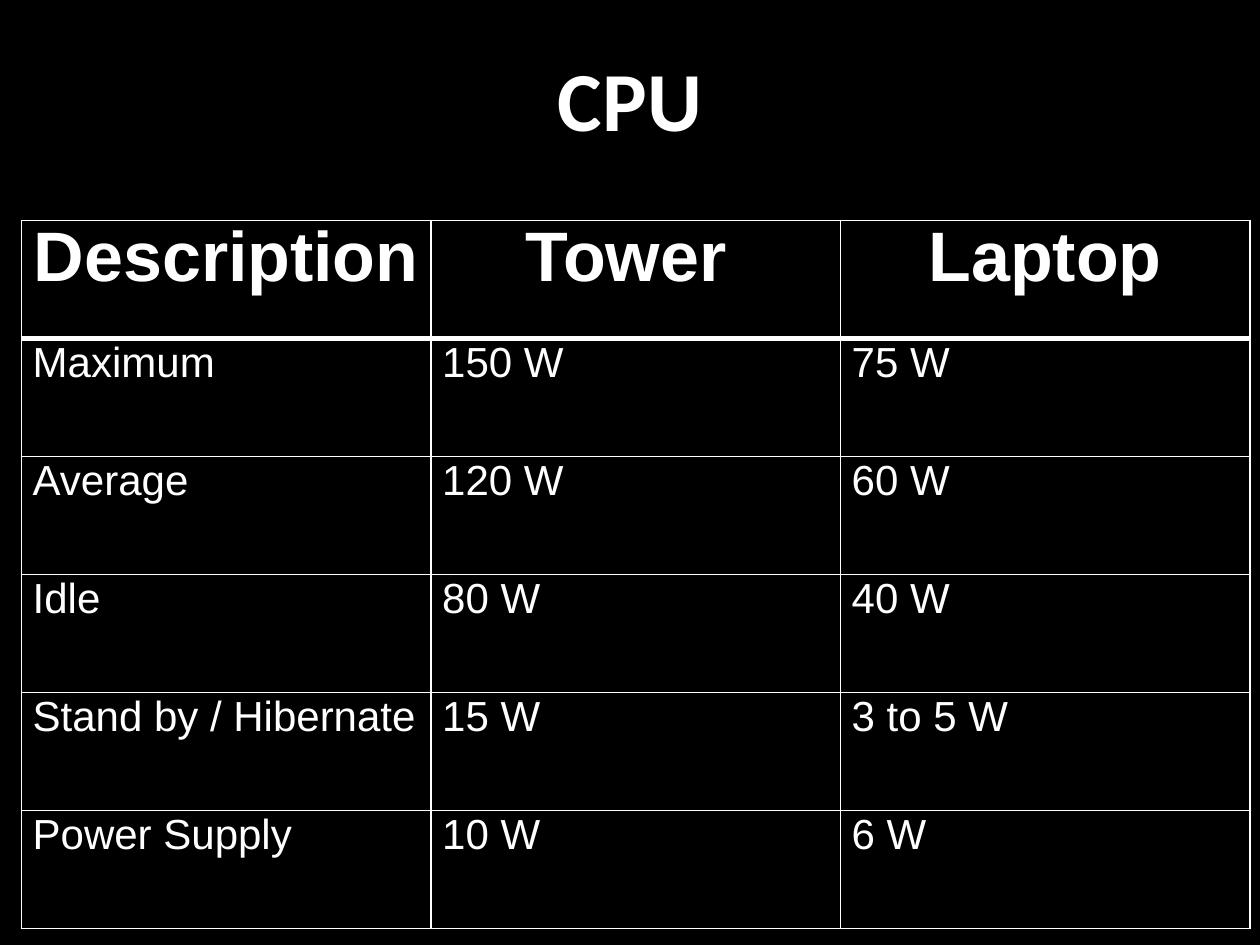
from lxml import etree
from pptx import Presentation
from pptx.dml.color import RGBColor
from pptx.enum.text import MSO_ANCHOR, PP_ALIGN
from pptx.oxml.ns import qn
from pptx.util import Inches, Pt

BLACK = RGBColor(0x00, 0x00, 0x00)
WHITE = RGBColor(0xFF, 0xFF, 0xFF)
CENTER, LEFT = PP_ALIGN.CENTER, PP_ALIGN.LEFT
MIDDLE = MSO_ANCHOR.MIDDLE
TITLE_ONLY = 5

POWER_ROWS = [
    ("Description ", "Tower ", "Laptop"),
    ("Maximum", "150 W", "75 W"),
    ("Average", "120 W", "60 W"),
    ("Idle", "80 W", "40 W"),
    ("Stand by / Hibernate", "15 W", "3 to 5 W"),
    ("Power Supply", "10 W", "6 W"),
]


def style_text(para, font_name, size, bold, alignment):
    para.alignment = alignment
    font = para.runs[0].font
    font.name, font.size, font.bold = font_name, Pt(size), bold
    font.color.rgb = WHITE


def add_borders(cell, widths):
    """Draw the cell's borders; widths maps each side (L, R, T, B) to points."""
    properties = cell._tc.get_or_add_tcPr()
    for position, side in enumerate("LRTB"):
        line = etree.Element(qn(f"a:ln{side}"), w=str(Pt(widths[side])))
        fill = etree.SubElement(line, qn("a:solidFill"))
        etree.SubElement(fill, qn("a:srgbClr"), val=str(WHITE))
        properties.insert(position, line)


deck = Presentation()
deck.slide_width, deck.slide_height = Inches(10), Inches(7.5)
slide = deck.slides.add_slide(deck.slide_layouts[TITLE_ONLY])
slide.background.fill.solid()
slide.background.fill.fore_color.rgb = BLACK

title = slide.shapes.title
title.left, title.top = Inches(0), Inches(0)
title.width, title.height = Inches(10), Inches(1.55)
title.text_frame.text = "CPU"
title.text_frame.vertical_anchor = MIDDLE
style_text(title.text_frame.paragraphs[0], "Calibri", 48, True, CENTER)

table = slide.shapes.add_table(
    len(POWER_ROWS), len(POWER_ROWS[0]),
    Inches(0.17), Inches(1.75), Inches(9.75), Inches(5.62),
).table
table.horz_banding = False

for row_index, row_texts in enumerate(POWER_ROWS):
    is_header = row_index == 0
    widths = {"L": 1, "R": 1, "T": 3 if row_index == 1 else 1, "B": 3 if is_header else 1}
    for column_index, text in enumerate(row_texts):
        cell = table.cell(row_index, column_index)
        cell.fill.solid()
        cell.fill.fore_color.rgb = BLACK
        cell.margin_left = cell.margin_right = Inches(0.09)
        cell.margin_top = cell.margin_bottom = Inches(0.05)
        add_borders(cell, widths)
        para = cell.text_frame.paragraphs[0]
        para.text = text
        para.line_spacing = 0.87
        style_text(para, "Arial", 40 if is_header else 24, is_header,
                   CENTER if is_header else LEFT)

deck.save("out.pptx")
